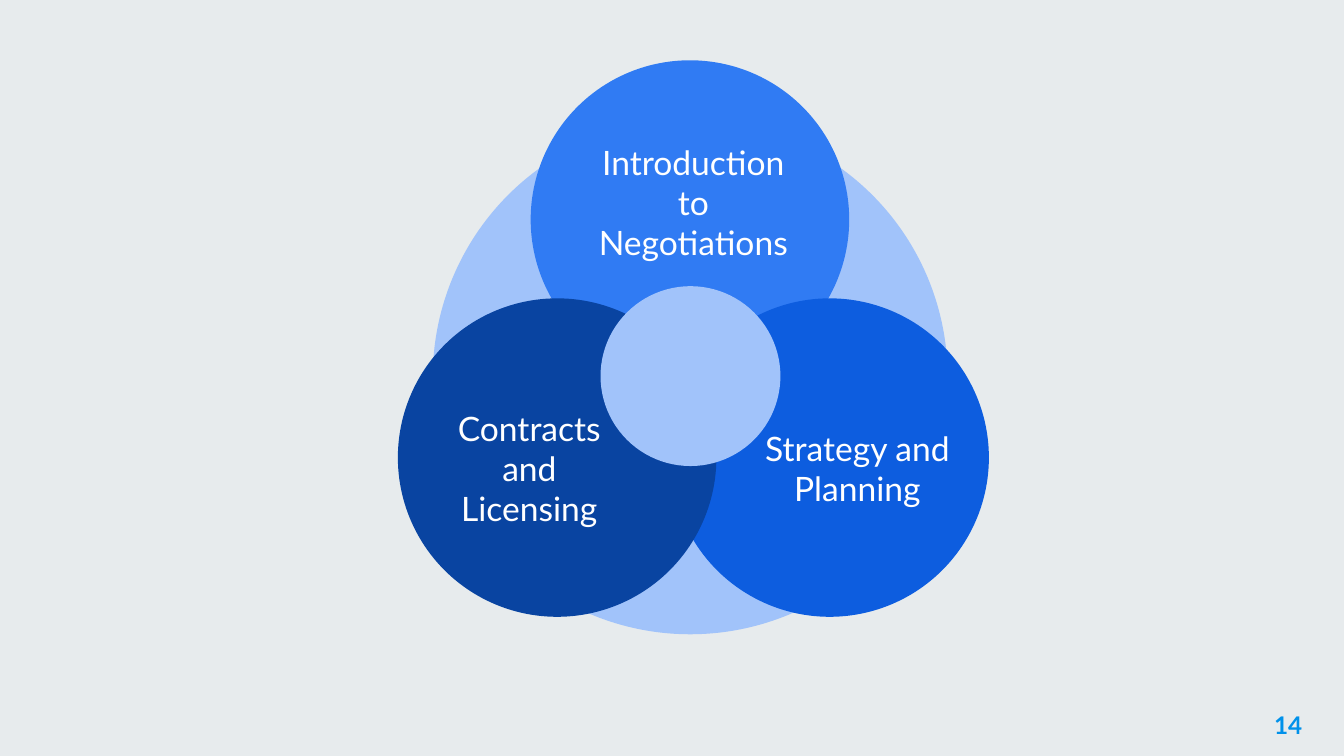
"""Build a slide with three overlapping topic circles around a central hub."""
from lxml import etree
from pptx import Presentation
from pptx import util as u
from pptx.dml.color import RGBColor
from pptx.enum import shapes, text
from pptx.oxml.ns import qn

GREY = RGBColor(0xCF, 0xD8, 0xDC)
PALE_BLUE = RGBColor(0xA1, 0xC3, 0xFA)
BRIGHT_BLUE = RGBColor(0x30, 0x7B, 0xF3)
MID_BLUE = RGBColor(0x0D, 0x5D, 0xDF)
DARK_BLUE = RGBColor(0x09, 0x44, 0xA1)
NUMBER_BLUE = RGBColor(0x00, 0x91, 0xEA)
WHITE = RGBColor(0xFF, 0xFF, 0xFF)


def add_filled(container, kind, left, top, width, height, color):
    shape = container.add_shape(kind, u.Cm(left), u.Cm(top), u.Cm(width), u.Cm(height))
    shape.shadow.inherit = False
    shape.fill.solid()
    shape.fill.fore_color.rgb = color
    shape.line.fill.background()
    return shape


def add_label(container, wording, left, top, width, height, size, color, alignment):
    label = container.add_textbox(u.Cm(left), u.Cm(top), u.Cm(width), u.Cm(height))
    frame = label.text_frame
    frame.text = wording
    frame.word_wrap = True
    frame.margin_left = frame.margin_right = u.Cm(0.25)
    frame.margin_top = frame.margin_bottom = u.Cm(0.25)
    paragraph = frame.paragraphs[0]
    paragraph.alignment = alignment
    font = paragraph.runs[0].font
    font.name = "Lato"
    font.size = u.Pt(size)
    font.color.rgb = color
    return label


presentation = Presentation()
presentation.slide_width = u.Cm(25.4)
presentation.slide_height = u.Cm(14.29)
slide = presentation.slides.add_slide(presentation.slide_layouts[6])

slide.background.fill.solid()
slide.background.fill.fore_color.rgb = WHITE
RECTANGLE = shapes.MSO_SHAPE.RECTANGLE
OVAL = shapes.MSO_SHAPE.OVAL

tint = add_filled(slide.shapes, RECTANGLE, -0.08, -0.05, 25.55, 14.38, GREY)
tint_color = tint.fill._xPr.find(qn("a:solidFill"))[0]
etree.SubElement(tint_color, qn("a:alpha"), val="49000")

number = add_label(slide.shapes, "14", 23.34, 13.18, 1.52, 1.09, 13,
                   NUMBER_BLUE, text.PP_ALIGN.RIGHT)
number.text_frame.paragraphs[0].runs[0].font.bold = True

add_filled(slide.shapes, OVAL, 8.18, 2.26, 9.73, 9.73, PALE_BLUE)

topics = [
    ("Introduction to Negotiations", BRIGHT_BLUE, 10.03, 1.14, 11.02, 2.84),
    ("Strategy and Planning", MID_BLUE, 12.67, 5.64, 14.12, 7.87),
    ("Contracts and Licensing", DARK_BLUE, 7.52, 5.64, 7.92, 7.87),
]
for wording, color, left, top, label_left, label_top in topics:
    group = slide.shapes.add_group_shape()
    add_filled(group.shapes, OVAL, left, top, 6.02, 6.02, color)
    label = add_label(group.shapes, wording, label_left, label_top, 4.17, 1.96, 18,
                      WHITE, text.PP_ALIGN.CENTER)
    label.text_frame.vertical_anchor = text.MSO_ANCHOR.MIDDLE

add_filled(slide.shapes, OVAL, 11.35, 5.41, 3.4, 3.4, PALE_BLUE)

presentation.save("out.pptx")
